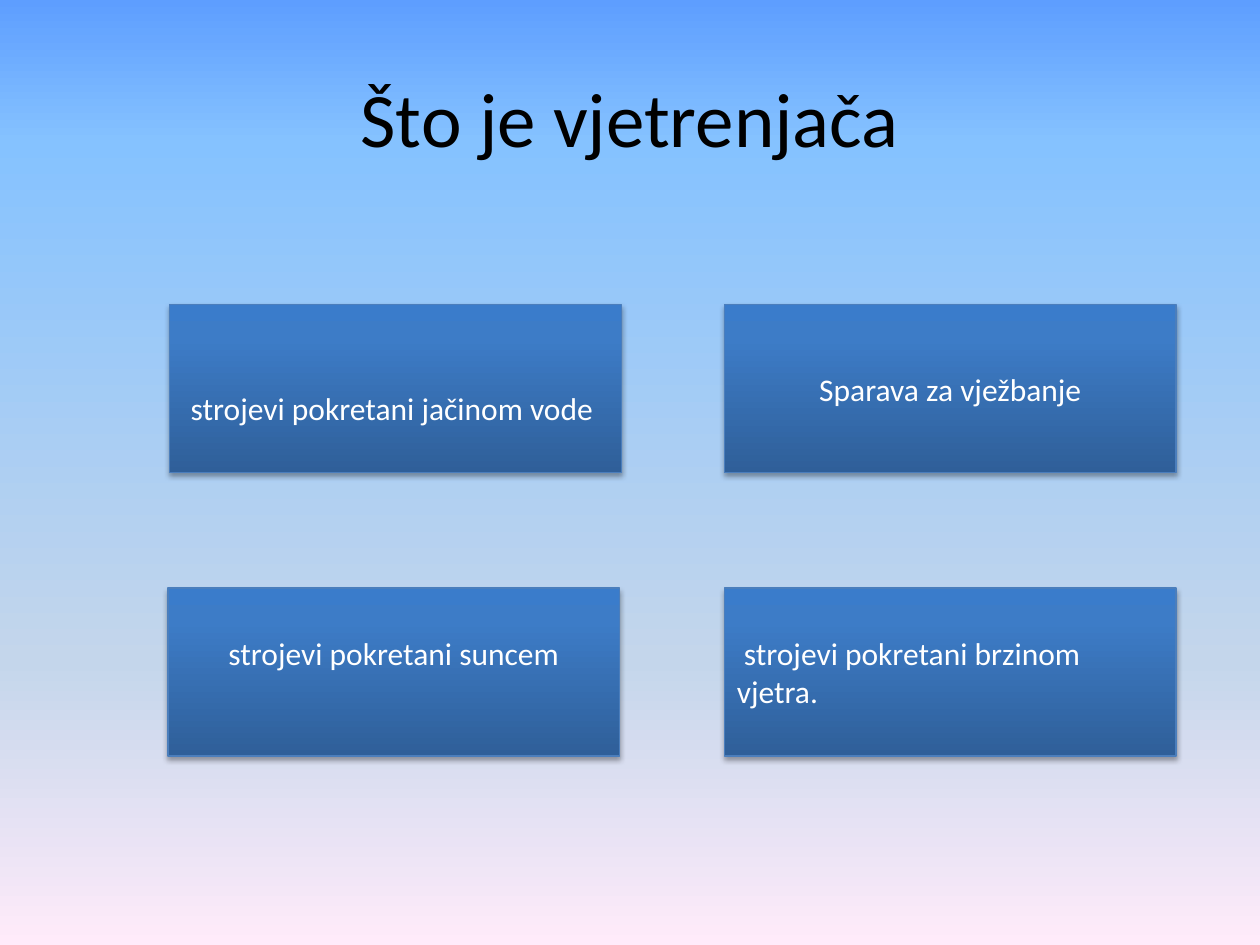
from pptx import Presentation
from pptx.dml.color import RGBColor as RGB
from pptx.enum.shapes import MSO_SHAPE as Shape
from pptx.enum.text import MSO_ANCHOR as Anchor, PP_ALIGN as Align
from pptx.oxml import parse_xml
from pptx.oxml.ns import nsdecls, qn
from pptx.util import Pt

COLOURS = {
    "title": "000000", "answer": "FFFFFF", "outline": "4B7EBC", "shadow": "000000",
    "sky": [(0, "5E9EFF"), (15, "85C2FF"), (70, "C4D6EB"), (100, "FFEBFA")],
    "button": [(0, "2F5F99"), (80, "3D7CC7"), (100, "3A7CCB")],
}
BLANK_LINE = 22  # height of one 18 pt line


class QuizSlide:
    font_name = "Calibri"

    def __init__(self, presentation):
        self.slide = presentation.slides.add_slide(presentation.slide_layouts[6])

    def gradient(self, fill, element, stops, angle):
        fill.gradient()
        fill.gradient_angle = angle
        stop_list = next(element.iter(qn("a:gsLst")))
        for old_stop in list(stop_list):
            stop_list.remove(old_stop)
        for position, colour in stops:
            stop_list.append(parse_xml(
                f'<a:gs {nsdecls("a")} pos="{position * 1000}">'
                f'<a:srgbClr val="{colour}"/></a:gs>'))

    def background(self):
        self.gradient(self.slide.background.fill, self.slide.element, COLOURS["sky"], 270)

    def shadow(self, shape):
        shape.shadow.inherit = False
        effects = shape.element.spPr.find(qn("a:effectLst"))
        effects.append(parse_xml(
            f'<a:outerShdw {nsdecls("a")} blurRad="{Pt(3.1)}" dist="{Pt(1.8)}" '
            f'dir="5400000" rotWithShape="0"><a:srgbClr val="{COLOURS["shadow"]}">'
            '<a:alpha val="35000"/></a:srgbClr></a:outerShdw>'))

    def set_text(self, shape, text, size, colour, align, **frame_format):
        frame = shape.text_frame
        frame_format = {"word_wrap": True, "vertical_anchor": Anchor.MIDDLE, **frame_format}
        for name, value in frame_format.items():
            setattr(frame, name, value)
        paragraph = frame.paragraphs[0]
        paragraph.alignment = align
        run = paragraph.add_run()
        run.text = text
        for name, value in {"name": self.font_name, "size": Pt(size)}.items():
            setattr(run.font, name, value)
        run.font.color.rgb = RGB.from_string(COLOURS[colour])

    def title(self, text, left, top, width, height):
        box = self.slide.shapes.add_textbox(Pt(left), Pt(top), Pt(width), Pt(height))
        self.set_text(box, text, 44, "title", Align.CENTER)

    def button(self, text, left, top, align=Align.CENTER, **margins):
        shape = self.slide.shapes.add_shape(
            Shape.ACTION_BUTTON_CUSTOM, Pt(left), Pt(top), Pt(258), Pt(96))
        self.gradient(shape.fill, shape.element.spPr, COLOURS["button"], 90)
        shape.line.color.rgb = RGB.from_string(COLOURS["outline"])
        shape.line.width = Pt(0.75)
        self.shadow(shape)
        self.set_text(shape, text, 18, "answer", align, **margins)


def main():
    presentation = Presentation()
    presentation.slide_width, presentation.slide_height = Pt(720), Pt(540)
    quiz = QuizSlide(presentation)

    # Sky and question
    quiz.background()
    quiz.title("Što je vjetrenjača", 36, 21.6, 648, 90)

    # Answers, two rows of two; a larger margin moves the text by half a line
    right, upper, lower = 414, 174, 336
    margin = Pt(3.6 + BLANK_LINE)
    quiz.button("strojevi pokretani suncem", 96, lower, margin_bottom=margin)
    quiz.button("Sparava za vježbanje", right, upper)
    quiz.button(" strojevi pokretani brzinom vjetra.", right, lower, Align.LEFT)
    quiz.button("strojevi pokretani jačinom vode ", 97, upper, margin_top=margin)

    presentation.save("out.pptx")


if __name__ == "__main__":
    main()
